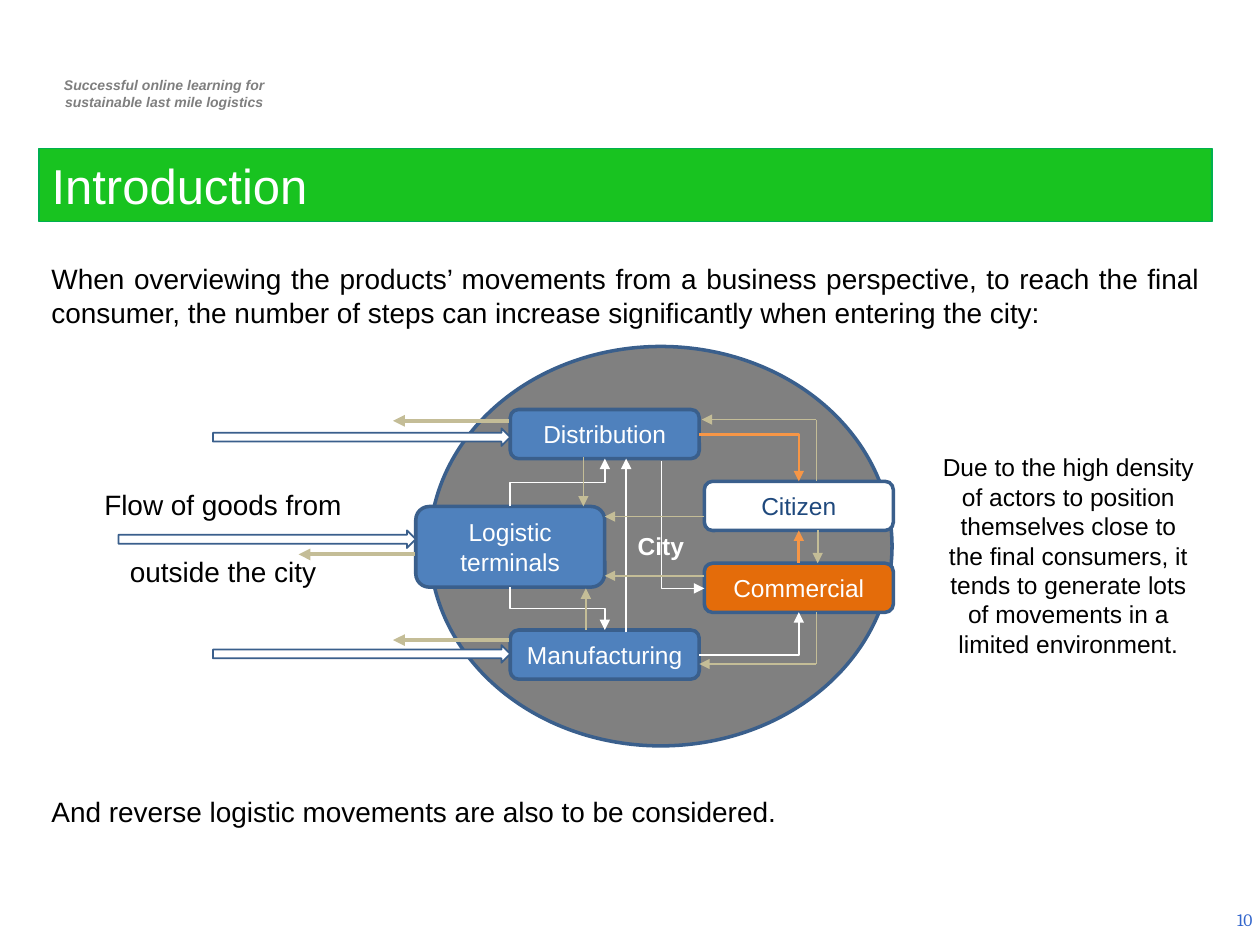
from dataclasses import dataclass

from lxml.etree import SubElement
from pptx import Presentation
from pptx.dml.color import RGBColor
from pptx.enum.shapes import MSO_CONNECTOR, MSO_SHAPE
from pptx.enum.text import MSO_ANCHOR, MSO_AUTO_SIZE, PP_ALIGN
from pptx.oxml.ns import qn
from pptx.util import Inches, Pt


@dataclass(frozen=True)
class Theme:
    font: str = "Arial"
    number_font: str = "Cambria"
    white: str = "FFFFFF"
    black: str = "000000"
    header: str = "7F7F7F"
    number: str = "3366CC"
    title_fill: str = "18C320"
    title_line: str = "00B050"
    city: str = "808080"
    outline: str = "3A5F8C"
    actor: str = "4F81BD"
    citizen_text: str = "1F497D"
    commercial: str = "E46C0A"
    to_citizen: str = "F79646"
    reverse: str = "C4BD97"
    title_size: int = 28
    body_size: int = 16
    label_size: int = 14
    number_size: int = 10
    header_size: int = 8


@dataclass(frozen=True)
class Box:
    left: float
    top: float
    width: float
    height: float

    def inner(self, x, y, width, height):
        return Box(self.left + x, self.top + y, width, height)

    def lengths(self):
        return [Inches(v) for v in (self.left, self.top, self.width, self.height)]


T = Theme()


def color(value):
    return RGBColor.from_string(value)


def write(tf, lines, size, ink, align=PP_ALIGN.CENTER, font=T.font,
          bold=None, italic=None, gap=0):
    for i, line in enumerate(lines):
        p = tf.paragraphs[0] if i == 0 else tf.add_paragraph()
        p.text = line
        p.alignment = align
        if i and gap:
            p.space_before = Pt(gap)
        p.font.name, p.font.size = font, Pt(size)
        p.font.bold, p.font.italic = bold, italic
        p.font.color.rgb = color(ink)


def add_text(s, box, lines, size=T.body_size, ink=T.black, **style):
    tf = s.shapes.add_textbox(*box.lengths()).text_frame
    tf.word_wrap = True
    write(tf, lines, size, ink, **style)
    return tf


def add_block(s, kind, box, fill, line_width, text=None, ink=T.white, bold=None):
    sp = s.shapes.add_shape(kind, *box.lengths())
    sp.shadow.inherit = False
    sp.fill.solid()
    sp.fill.fore_color.rgb = color(fill)
    sp.line.color.rgb = color(T.outline)
    sp.line.width = Pt(line_width)
    if text:
        sp.text_frame.vertical_anchor = MSO_ANCHOR.MIDDLE
        write(sp.text_frame, [text], T.label_size, ink, bold=bold)
    return sp


def add_line(s, box, ends, ink, width=1, head=True, kind=MSO_CONNECTOR.STRAIGHT):
    x1, y1, x2, y2 = ends
    cx = s.shapes.add_connector(
        kind, Inches(box.left + x1), Inches(box.top + y1),
        Inches(box.left + x2), Inches(box.top + y2))
    cx.line.color.rgb = color(ink)
    cx.line.width = Pt(width)
    if head:
        SubElement(cx.line._get_or_add_ln(), qn("a:tailEnd"), type="triangle")
    SubElement(cx._element.spPr, qn("a:effectLst"))
    return cx


def add_elbow(s, box, ends, ink, width=1, turn=0, corners=2):
    """Elbow that leaves sideways, or up or down when turned by 90 or 270."""
    x1, y1, x2, y2 = ends
    mx, my = (x1 + x2) / 2, (y1 + y2) / 2
    dx, dy = x1 - mx, y1 - my
    if turn:
        dx, dy = (dy, -dx) if turn == 90 else (-dy, dx)
    cx = add_line(s, box, (mx + dx, my + dy, mx - dx, my - dy), ink, width,
                  kind=MSO_CONNECTOR.ELBOW)
    cx.rotation = turn
    geometry = cx._element.spPr.find(qn("a:prstGeom"))
    geometry.set("prst", f"bentConnector{corners + 1}")


def header(s, box):
    add_text(s, box, ["Successful online learning for", "sustainable last mile logistics"],
             T.header_size, T.header, bold=True, italic=True)


def title(s, box):
    sp = s.shapes.title
    sp.left, sp.top, sp.width, sp.height = box.lengths()
    sp.fill.solid()
    sp.fill.fore_color.rgb = color(T.title_fill)
    sp.line.color.rgb = color(T.title_line)
    sp.line.width = Pt(0.75)
    tf = sp.text_frame
    tf.auto_size = MSO_AUTO_SIZE.NONE
    tf.vertical_anchor = MSO_ANCHOR.BOTTOM
    write(tf, ["Introduction"], T.title_size, T.white, PP_ALIGN.LEFT)
    tf.paragraphs[0].line_spacing = 0.9


def city_diagram(s, box):
    # City and its actors
    add_block(s, MSO_SHAPE.OVAL, box.inner(2.71, 0, 3.67, 3.17), T.city, 2, "City", bold=True)
    actors = {}
    for name, x, y, height, fill, ink in (
            ("Distribution", 3.35, 0.5, 0.39, T.actor, T.white),
            ("Manufacturing", 3.35, 2.25, 0.39, T.actor, T.white),
            ("Logistic terminals", 2.6, 1.27, 0.64, T.actor, T.white),
            ("Citizen", 4.89, 1.07, 0.39, T.white, T.citizen_text),
            ("Commercial", 4.89, 1.72, 0.39, T.commercial, T.white)):
        actors[name] = add_block(s, MSO_SHAPE.ROUNDED_RECTANGLE,
                                 box.inner(x, y, 1.5, height), fill, 2, name, ink)

    # Forward flows between actors
    add_line(s, box, (4.27, 2.27, 4.27, 0.89), T.white)
    for ends, turn, corners in (
            ((3.35, 1.27, 4.1, 0.89), 90, 2),
            ((3.35, 1.91, 4.1, 2.25), 270, 2),
            ((4.55, 0.91, 4.89, 1.92), 270, 1),
            ((4.85, 2.45, 5.64, 2.11), 0, 1)):
        add_elbow(s, box, ends, T.white, turn=turn, corners=corners)

    # Deliveries to the citizen
    add_elbow(s, box, (4.85, 0.7, 5.64, 1.07), T.to_citizen, 1.5, corners=1)
    cx = add_line(s, box, (5.64, 1.72, 5.64, 1.46), T.to_citizen, 1.5)
    cx.begin_connect(actors["Commercial"], 0)
    cx.end_connect(actors["Citizen"], 2)

    # Goods entering the city
    for x, y in ((0.24, 1.46), (0.99, 0.65), (0.99, 2.37)):
        add_block(s, MSO_SHAPE.RIGHT_ARROW, box.inner(x, y, 2.36, 0.14), T.white, 1)
    add_text(s, box.inner(0.01, 1.07, 2.12, 0.91),
             ["Flow of goods from", "outside the city"], gap=19)

    # Reverse flows: inside the city, their tails, and out of the city
    for ends in ((5.79, 1.46, 5.79, 1.72), (5.78, 0.58, 4.87, 0.58),
                 (4.89, 1.35, 4.1, 1.35), (4.89, 1.82, 4.1, 1.82),
                 (5.78, 2.52, 4.85, 2.52), (3.95, 2.25, 3.95, 1.92),
                 (3.93, 0.88, 3.93, 1.27)):
        add_line(s, box, ends, T.reverse)
    for top, bottom in ((0.58, 1.07), (2.11, 2.52)):
        add_line(s, box, (5.78, top, 5.78, bottom), T.reverse, 0.75, head=False)
    for x, y in ((3.34, 0.59), (2.59, 1.65), (3.34, 2.33)):
        add_line(s, box, (x, y, x - 0.92, y), T.reverse, 2.25)


def slide_number(s, box):
    tf = add_text(s, box, ["10"], T.number_size, T.number,
                  align=PP_ALIGN.RIGHT, font=T.number_font)
    tf.vertical_anchor = MSO_ANCHOR.MIDDLE
    tf.margin_right = Inches(0.06)


def main():
    prs = Presentation()
    prs.slide_width, prs.slide_height = Inches(10), Inches(7.5)
    s = prs.slides.add_slide(prs.slide_layouts[5])
    header(s, Box(0.29, 0.56, 2.03, 0.37))
    title(s, Box(0.31, 1.18, 9.31, 0.58))
    add_text(s, Box(0.31, 2.03, 9.31, 0.64),
             ["When overviewing the products’ movements from a business perspective, "
              "to reach the final consumer, the number of steps can increase "
              "significantly when entering the city:"], align=PP_ALIGN.JUSTIFY)
    city_diagram(s, Box(0.7, 2.75, 6.39, 3.17))
    add_text(s, Box(7.38, 3.54, 2.2, 1.75),
             ["Due to the high density of actors to position themselves close to the "
              "final consumers, it tends to generate lots of movements in a limited "
              "environment."], T.label_size)
    add_text(s, Box(0.31, 6.26, 9.31, 0.37),
             ["And reverse logistic movements are also to be considered."],
             align=PP_ALIGN.JUSTIFY)
    slide_number(s, Box(7.71, 7.1, 2.29, 0.4))
    prs.save("out.pptx")


if __name__ == "__main__":
    main()
